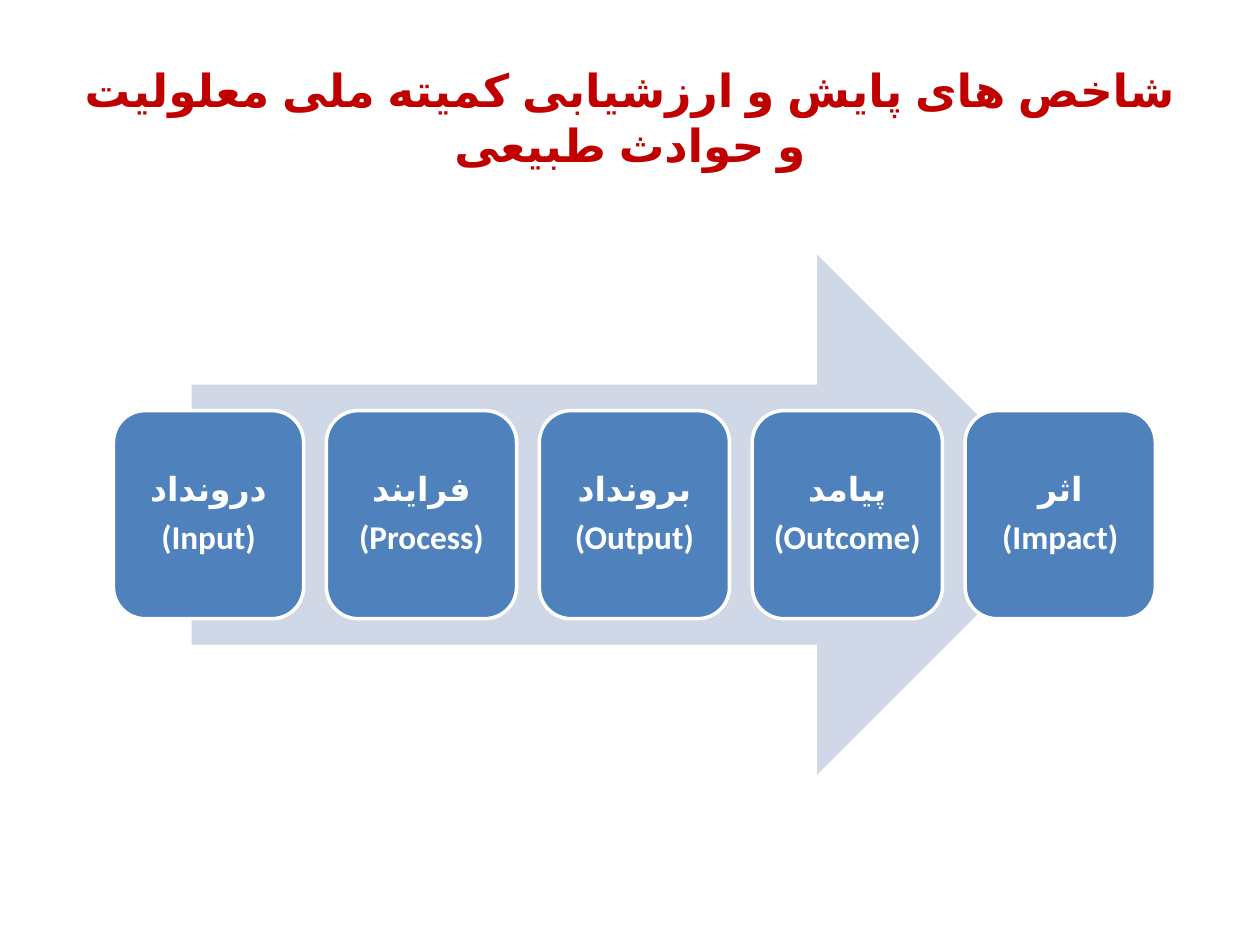
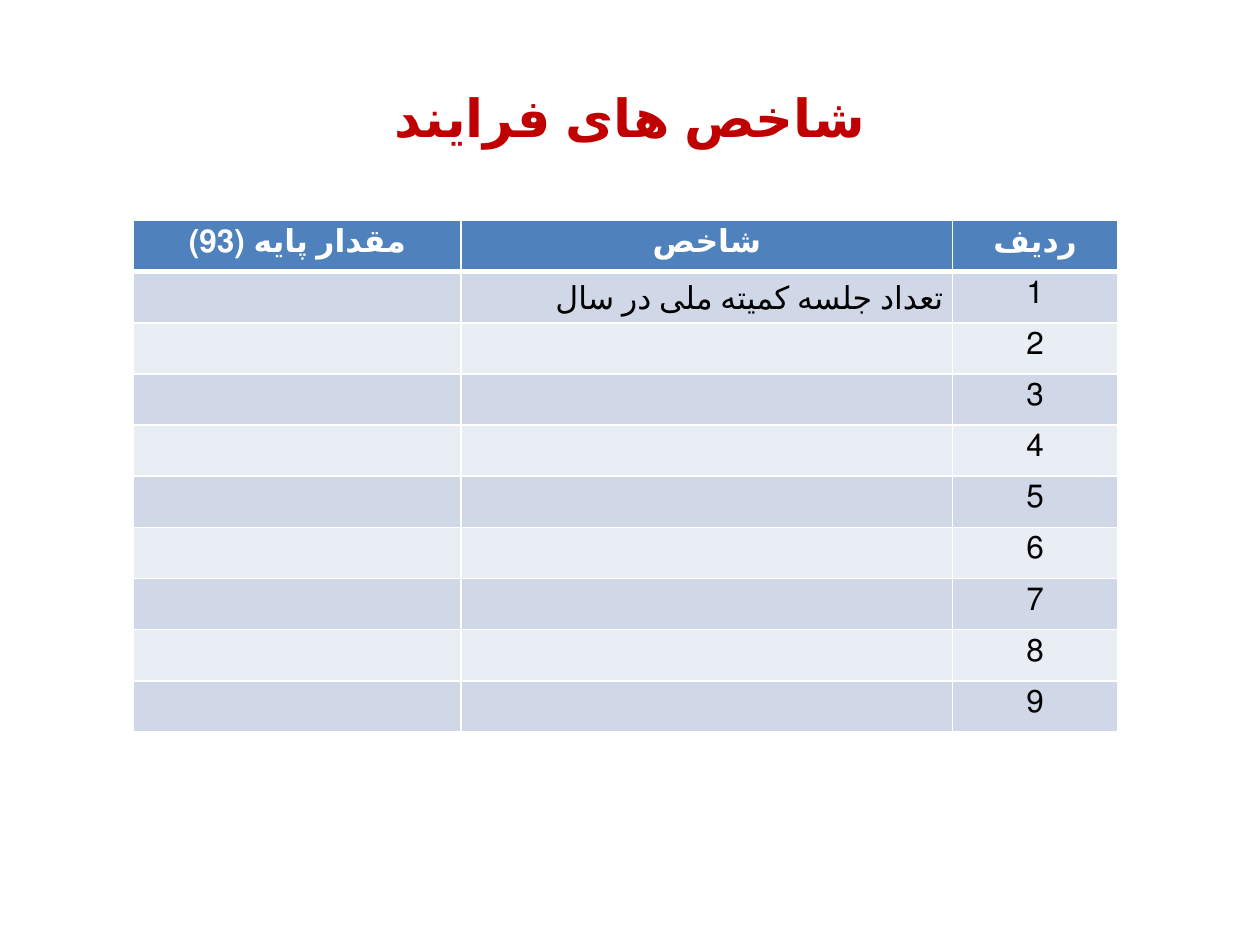
from dataclasses import dataclass

from lxml.etree import SubElement
from pptx import Presentation
from pptx.dml.color import RGBColor
from pptx.enum.lang import MSO_LANGUAGE_ID
from pptx.enum.shapes import MSO_SHAPE
from pptx.enum.text import MSO_ANCHOR, PP_ALIGN
from pptx.oxml.ns import qn
from pptx.util import Inches, Pt


@dataclass(frozen=True)
class Theme:
    font: str = "Calibri"
    title: str = "C00000"
    primary: str = "4F81BD"
    band: str = "D0D8E8"
    light_band: str = "E9EDF4"
    white: str = "FFFFFF"
    black: str = "000000"
    long_title_size: int = 26
    title_size: int = 30
    stage_size: int = 19
    table_size: int = 18


THEME = Theme()

TITLE_BOX = (0.5, 0.3, 9, 1.25)
PROCESS_BOX = (0.9, 2.02, 8.27, 4.13)
TABLE_BOX = (1.06, 1.75, 7.81, 4.06)

STAGES = [
    ("درونداد", "(Input)"),
    ("فرایند", "(Process)"),
    ("برونداد", "(Output)"),
    ("پیامد", "(Outcome)"),
    ("اثر", "(Impact)"),
]

HEADERS = ["مقدار پایه (93)", "شاخص", "ردیف"]
INDICATORS = ["تعداد جلسه کمیته ملی در سال"] + [""] * 8
COLUMN_WIDTHS = [2.6, 3.9, 1.31]


def color(value):
    return RGBColor.from_string(value)


def style_paragraph(paragraph, size, font_color, bold=False, rtl=True,
                    alignment=PP_ALIGN.CENTER):
    paragraph.alignment = alignment
    if rtl:
        paragraph._p.get_or_add_pPr().set("rtl", "1")
    for run in paragraph.runs:
        run.font.name = THEME.font
        run.font.size = Pt(size)
        run.font.bold = bold
        run.font.color.rgb = color(font_color)
        # Persian text gets its glyphs by language
        run.font.language_id = (MSO_LANGUAGE_ID.FARSI if rtl
                                else MSO_LANGUAGE_ID.ENGLISH_US)


def add_title(slide, box, text, size):
    shape = slide.shapes.add_textbox(*map(Inches, box))
    text_frame = shape.text_frame
    text_frame.word_wrap = True
    text_frame.vertical_anchor = MSO_ANCHOR.MIDDLE
    text_frame.text = text
    style_paragraph(text_frame.paragraphs[0], size, THEME.title, bold=True)


def add_filled_shape(slide, preset, box, fill_color):
    shape = slide.shapes.add_shape(preset, *map(Inches, box))
    shape.shadow.inherit = False
    shape.fill.solid()
    shape.fill.fore_color.rgb = color(fill_color)
    shape.line.fill.background()
    return shape


def add_stage(slide, box, names):
    stage = add_filled_shape(slide, MSO_SHAPE.ROUNDED_RECTANGLE, box, THEME.primary)
    stage.line.color.rgb = color(THEME.white)
    stage.line.width = Pt(2)
    text_frame = stage.text_frame
    text_frame.word_wrap = True
    text_frame.vertical_anchor = MSO_ANCHOR.MIDDLE
    text_frame.margin_left = text_frame.margin_right = Inches(0.08)
    text_frame.margin_top = text_frame.margin_bottom = Inches(0.08)
    text_frame.text = "\n".join(names)
    for paragraph, rtl in zip(text_frame.paragraphs, (True, False)):
        paragraph.line_spacing = 0.9
        paragraph.space_after = Pt(6.65)
        style_paragraph(paragraph, THEME.stage_size, THEME.white, bold=True, rtl=rtl)


def add_process(slide, box, stages):
    left, top, width, height = box

    # Arrow behind the stages
    arrow_width = width * 0.85
    arrow_left = left + (width - arrow_width) / 2
    add_filled_shape(slide, MSO_SHAPE.RIGHT_ARROW,
                     (arrow_left, top, arrow_width, height), THEME.band)

    # Equal stages centred on the arrow
    gap = 0.18
    stage_width = (width - gap * (len(stages) - 1)) / len(stages)
    stage_height = height * 0.4
    stage_top = top + (height - stage_height) / 2
    for index, names in enumerate(stages):
        stage_left = left + index * (stage_width + gap)
        add_stage(slide, (stage_left, stage_top, stage_width, stage_height), names)


def set_cell_borders(cell, top=1, bottom=1):
    properties = cell._tc.get_or_add_tcPr()
    for side, points in (("lnL", 1), ("lnR", 1), ("lnT", top), ("lnB", bottom)):
        line = SubElement(properties, qn(f"a:{side}"), w=str(Pt(points)))
        fill = SubElement(line, qn("a:solidFill"))
        SubElement(fill, qn("a:srgbClr"), val=THEME.white)


def fill_cell(cell, text, fill_color, font_color, bold=False):
    cell.fill.solid()
    cell.fill.fore_color.rgb = color(fill_color)
    cell.text_frame.text = text
    style_paragraph(cell.text_frame.paragraphs[0], THEME.table_size, font_color, bold)


def align_indicator(cell):
    cell.vertical_anchor = MSO_ANCHOR.MIDDLE
    cell.margin_left = cell.margin_right = Inches(0.07)
    cell.margin_top = cell.margin_bottom = 0
    paragraph = cell.text_frame.paragraphs[0]
    paragraph.alignment = PP_ALIGN.RIGHT
    paragraph.line_spacing = 1.15


def add_indicator_table(slide, box, headers, indicators):
    row_count = len(indicators) + 1
    frame = slide.shapes.add_table(row_count, len(headers), *map(Inches, box))
    table = frame.table
    for column, width in zip(table.columns, COLUMN_WIDTHS):
        column.width = Inches(width)
    for row in table.rows:
        row.height = Inches(box[3] / row_count)

    # Header row
    for cell, header in zip(table.rows[0].cells, headers):
        set_cell_borders(cell, bottom=3)
        fill_cell(cell, header, THEME.primary, THEME.white, bold=True)

    # Numbered rows in alternating bands
    for number, indicator in enumerate(indicators, start=1):
        band = THEME.band if number % 2 else THEME.light_band
        cells = table.rows[number].cells
        for cell, text in zip(cells, ("", indicator, str(number))):
            set_cell_borders(cell, top=3 if number == 1 else 1)
            fill_cell(cell, text, band, THEME.black)
        if indicator:
            align_indicator(cells[1])


def build_process_slide(slide):
    add_title(slide, TITLE_BOX,
              "شاخص های پایش و ارزشیابی کمیته ملی معلولیت و حوادث طبیعی",
              THEME.long_title_size)
    add_process(slide, PROCESS_BOX, STAGES)


def build_indicator_slide(slide):
    add_title(slide, TITLE_BOX, "شاخص های فرایند", THEME.title_size)
    add_indicator_table(slide, TABLE_BOX, HEADERS, INDICATORS)


def main():
    presentation = Presentation()
    presentation.slide_width = Inches(10)
    presentation.slide_height = Inches(7.5)
    blank_layout = presentation.slide_layouts[6]
    for build in (build_process_slide, build_indicator_slide):
        build(presentation.slides.add_slide(blank_layout))
    presentation.save("out.pptx")


if __name__ == "__main__":
    main()
